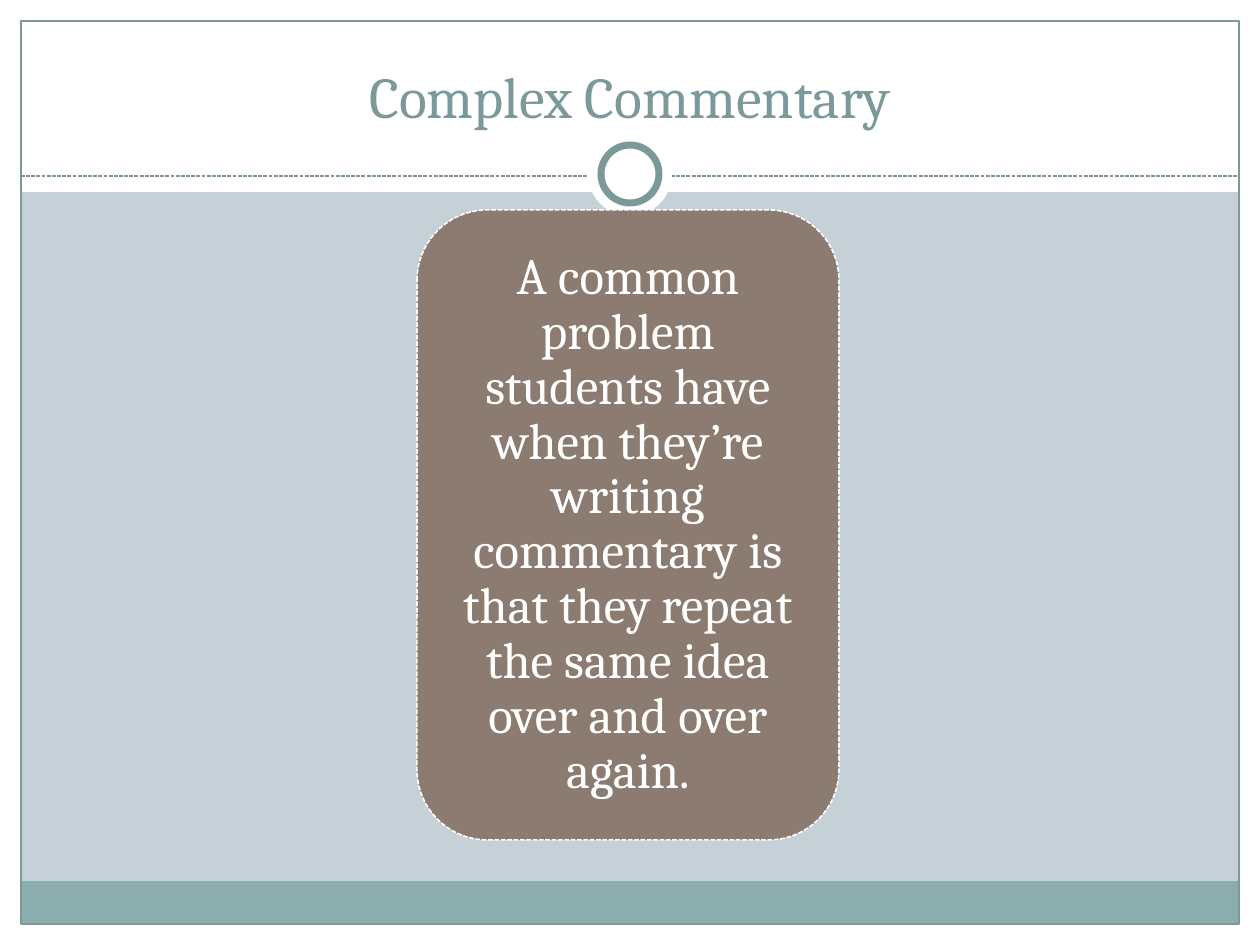
from lxml import etree
from pptx import Presentation
from pptx.dml.color import RGBColor
from pptx.enum.dml import MSO_LINE
from pptx.enum.shapes import MSO_CONNECTOR, MSO_SHAPE
from pptx.enum.text import MSO_ANCHOR, PP_ALIGN
from pptx.oxml.ns import qn
from pptx.util import Pt

WHITE = RGBColor(0xFF, 0xFF, 0xFF)
PALE = RGBColor(0xC5, 0xD1, 0xD7)
TEAL = RGBColor(0x7C, 0x99, 0x9A)
BAND = RGBColor(0x8C, 0xAD, 0xAE)
BROWN = RGBColor(0x8C, 0x7B, 0x70)

RECT, OVAL, ROUND = MSO_SHAPE.RECTANGLE, MSO_SHAPE.OVAL, MSO_SHAPE.ROUNDED_RECTANGLE
DASH = MSO_LINE.SQUARE_DOT
STRAIGHT = MSO_CONNECTOR.STRAIGHT
CENTER = PP_ALIGN.CENTER
MIDDLE, BOTTOM = MSO_ANCHOR.MIDDLE, MSO_ANCHOR.BOTTOM

WIDE, HIGH, EDGE = 1260, 945, 21
FONT = "Cambria"


def emu(px):
    return round(px * 914400 / 126)


class Board:
    """Holds the font and the current slide."""

    def __init__(self, deck, font):
        self.font = font
        self.slide = deck.slides.add_slide(deck.slide_layouts[6])
        fill = self.slide.background.fill
        fill.solid()
        fill.fore_color.rgb = PALE

    def stroke(self, line, color, width, dash=None):
        line.color.rgb = color
        line.width = Pt(width)
        if dash:
            line.dash_style = dash

    def shape(self, kind, box, fill=None, line=None):
        item = self.slide.shapes.add_shape(kind, *map(emu, box))
        item.shadow.inherit = False
        if fill is None:
            item.fill.background()
        else:
            item.fill.solid()
            item.fill.fore_color.rgb = fill
        if line:
            self.stroke(item.line, *line)
        else:
            item.line.fill.background()
        return item

    def rule(self, start, end, *style):
        item = self.slide.shapes.add_connector(STRAIGHT, *map(emu, start + end))
        self.stroke(item.line, *style)
        etree.SubElement(item._element.spPr, qn("a:effectLst"))

    def label(self, item, text, size, color, anchor):
        """Put one centred paragraph into a shape or text box."""
        frame = item.text_frame
        frame.text = text
        frame.word_wrap = True
        frame.vertical_anchor = anchor
        para = frame.paragraphs[0]
        para.alignment = CENTER
        font = para.runs[0].font
        font.name, font.size = self.font, Pt(size)
        font.color.rgb = color
        return frame

    def title(self, box, text):
        item = self.slide.shapes.add_textbox(*map(emu, box))
        self.label(item, text, 33, TEAL, BOTTOM)

    def card(self, box, text):
        item = self.shape(ROUND, box, BROWN, (WHITE, 0.9, DASH))
        frame = self.label(item, text, 29, WHITE, MIDDLE)
        frame.margin_left = frame.margin_right = emu(15)
        frame.margin_top = frame.margin_bottom = emu(8)
        frame.paragraphs[0].line_spacing = 0.9

    def disc(self, mid, size, line=None):
        """Draw a white circle around a centre point."""
        left, top = (at - size // 2 for at in mid)
        self.shape(OVAL, (left, top, size, size), WHITE, line)


def main():
    deck = Presentation()
    deck.slide_width, deck.slide_height = emu(WIDE), emu(HIGH)
    board = Board(deck, FONT)
    right, foot = WIDE - EDGE, HIGH - EDGE
    inner = right - EDGE

    margins = [(0, foot, WIDE, EDGE), (0, 0, WIDE, 192),
               (0, 0, EDGE, HIGH), (right, 0, EDGE, HIGH)]
    for box in margins:
        board.shape(RECT, box, WHITE)
    board.shape(RECT, (EDGE, 881, inner, foot - 881), BAND)
    board.shape(RECT, (EDGE, EDGE, inner, foot - EDGE), line=(TEAL, 0.75))

    board.rule((EDGE, 176), (right, 176), TEAL, 0.75, DASH)
    mid = (WIDE // 2, 174)
    board.disc(mid, 84)
    board.disc(mid, 58, (TEAL, 4))

    board.title((42, 32, 1176, 104), "Complex Commentary")
    board.card((417, 210, 422, 630),
               "A common problem students have when they’re writing commentary "
               "is that they repeat the same idea over and over again.")
    deck.save("out.pptx")


if __name__ == "__main__":
    main()
